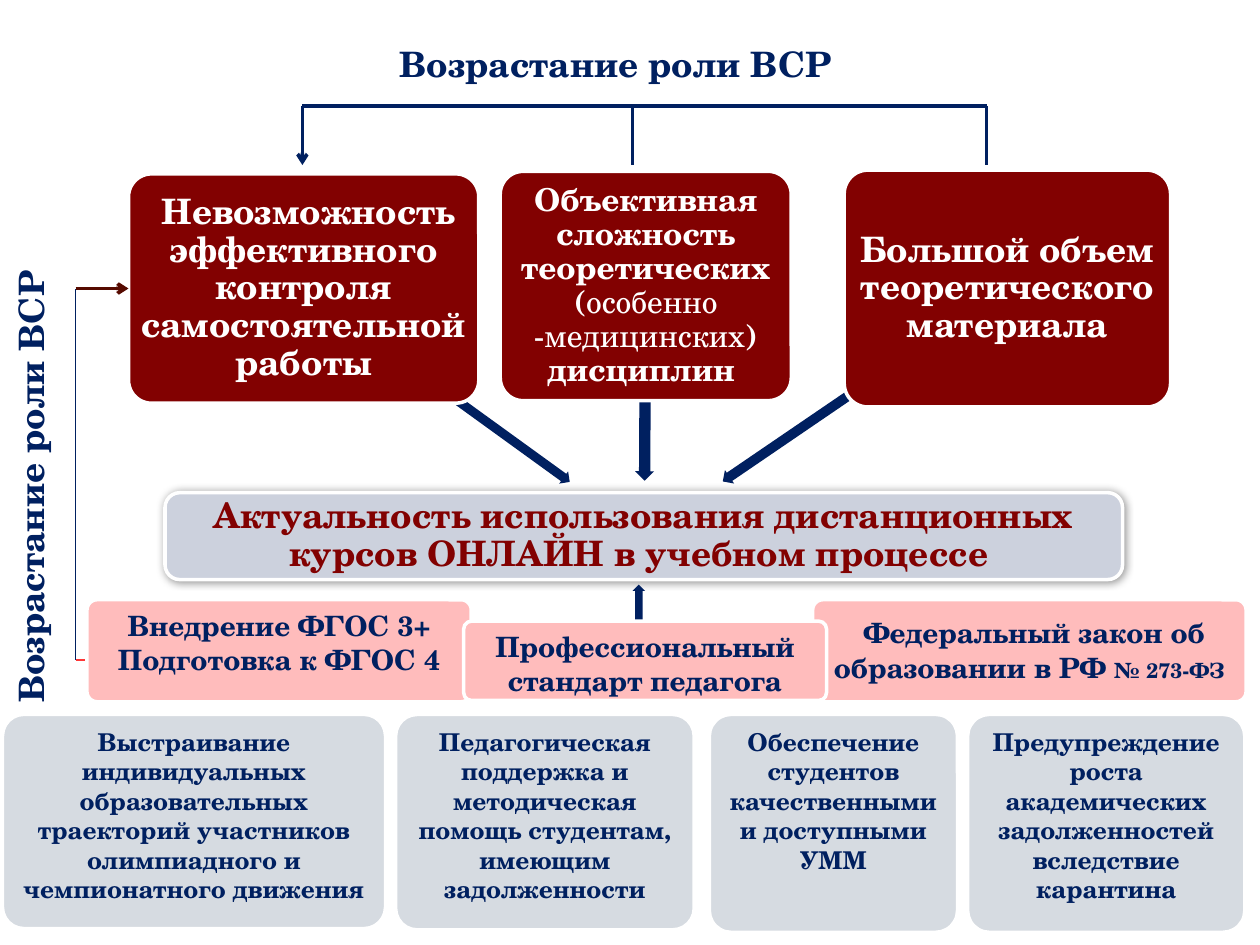
from lxml import etree
from pptx import Presentation
from pptx.dml.color import RGBColor
from pptx.enum.shapes import MSO_CONNECTOR, MSO_SHAPE
from pptx.enum.text import MSO_ANCHOR, PP_ALIGN
from pptx.oxml.ns import qn
from pptx.util import Inches, Pt

ROUNDED, LEFT_ARROW = MSO_SHAPE.ROUNDED_RECTANGLE, MSO_SHAPE.LEFT_ARROW
STRAIGHT = MSO_CONNECTOR.STRAIGHT
TOP, MIDDLE = MSO_ANCHOR.TOP, MSO_ANCHOR.MIDDLE
LEFT, CENTER = PP_ALIGN.LEFT, PP_ALIGN.CENTER
LEFT_SIDE = 1

FONT = "TeX Gyre Schola"
NAVY, MAROON, WHITE = "002060", "820101", "FFFFFF"
PINK, GREY, BLUE_GREY = "FFBCBC", "D6DBE1", "CCD1DD"
HEADING = "Возрастание роли ВСР"

REASON_TOP, BASIS_TOP, TASK_TOP = 1.38, 4.76, 5.67
BRACKET_TOP, BRACKET_BOTTOM = 0.84, 1.31
BRACKET_LEFT, BRACKET_MIDDLE, BRACKET_RIGHT = 2.4, 5.02, 7.83
LOOP_X, LOOP_TOP, LOOP_BOTTOM = 0.6, 2.29, 5.24

REASONS = [
    ((1.02, REASON_TOP, 2.78, 1.82),
     [[(" Невозможность эффективного контроля самостоятельной работы", 20, True)]]),
    ((3.97, 1.36, 2.31, 1.82),
     [[("Объективная сложность теоретических (", 18, True),
       ("особенно -медицинских", 18, False), (") дисциплин ", 18, True)]]),
    ((6.7, 1.35, 2.59, 1.88),
     [[("Большой объем теоретического материала", 20, True)]]),
]
ARROWS = [
    ((2.16, 3, 2.61, 0.12), 215.9),
    ((4.35, 2.97, 1.54, 0.15), 270.3),
    ((5.5, 2.99, 2.72, 0.13), 325.7),
    ((4.81, 4.85, 0.52, 0.1), 90),
]
BASES = [
    ((6.45, BASIS_TOP, 3.44, 0.81),
     [[(" ", 20, True), ("Федеральный закон об образовании в РФ ", 16, True),
       ("№ 273-ФЗ", 12, True)]]),
    ((0.69, BASIS_TOP, 3.05, 0.81),
     [[("Внедрение ФГОС 3+", 16, True)], [("Подготовка к ФГОС 4", 16, True)]]),
    ((3.68, 4.93, 2.88, 0.63),
     [[("Профессиональный стандарт педагога", 16, True)]]),
]
TASKS = [
    (0.02, 3.04, 1.7, "Выстраивание индивидуальных образовательных траекторий "
                      "участников олимпиадного и чемпионатного движения"),
    (3.14, 2.37, 1.71, "Педагогическая поддержка и методическая помощь студентам, "
                       "имеющим задолженности"),
    (5.63, 1.97, 1.73, "Обеспечение студентов качественными и доступными УММ"),
    (7.68, 2.2, 1.73, "Предупреждение роста академических задолженностей "
                      "вследствие карантина"),
]


def color(value):
    """Turn a hex string into a colour."""
    return RGBColor.from_string(value)


def write(shape, paragraphs, ink, align=CENTER, anchor=TOP, inset=None, spacing=None):
    """Fill a shape with paragraphs of (text, size, bold) runs."""
    frame = shape.text_frame
    frame.word_wrap = True
    frame.vertical_anchor = anchor
    if inset is not None:
        for side in ("left", "right", "top", "bottom"):
            setattr(frame, f"margin_{side}", Inches(inset))
    for index, runs in enumerate(paragraphs):
        paragraph = frame.add_paragraph() if index else frame.paragraphs[0]
        paragraph.alignment = align
        paragraph.line_spacing = spacing
        for text, size, bold in runs:
            run = paragraph.add_run()
            run.text = text
            for name, value in {"name": FONT, "size": Pt(size), "bold": bold}.items():
                setattr(run.font, name, value)
            run.font.color.rgb = color(ink)


def add_card(slide, box, fill, paragraphs, ink=NAVY, rounding=0.1, **layout):
    """Draw a rounded card with a white outline and text."""
    card = slide.shapes.add_shape(ROUNDED, *map(Inches, box))
    card.adjustments[0] = rounding
    card.shadow.inherit = False
    card.fill.solid()
    card.fill.fore_color.rgb = color(fill)
    card.line.color.rgb = color(WHITE)
    card.line.width = Pt(2)
    write(card, paragraphs, ink, **layout)
    return card


def add_glow(card):
    """Put a soft dark shadow around a card."""
    effects = card._element.spPr.find(qn("a:effectLst"))
    shadow = etree.SubElement(effects, qn("a:outerShdw"), blurRad=str(Pt(5)),
                              dist="0", dir="0", rotWithShape="0")
    tint = etree.SubElement(shadow, qn("a:srgbClr"), val="000000")
    etree.SubElement(tint, qn("a:alpha"), val="40000")


def add_block_arrow(slide, box, rotation):
    """Draw a rotated solid arrow."""
    arrow = slide.shapes.add_shape(LEFT_ARROW, *map(Inches, box))
    arrow.adjustments[0] = 0.6
    arrow.adjustments[1] = 0.5
    arrow.rotation = rotation
    arrow.shadow.inherit = False
    arrow.fill.solid()
    arrow.fill.fore_color.rgb = color(NAVY)
    arrow.line.fill.background()


def add_line(slide, start, end, ink=NAVY, width=2, head=False):
    """Draw a straight line, with an arrowhead at its end on request."""
    line = slide.shapes.add_connector(STRAIGHT, *map(Inches, start + end))
    line.line.color.rgb = color(ink)
    line.line.width = Pt(width)
    if head:
        etree.SubElement(line.line._get_or_add_ln(), qn("a:tailEnd"), type="arrow")
    etree.SubElement(line._element.spPr, qn("a:effectLst"))
    return line


def add_headings(slide):
    """Place the title and its copy along the left edge."""
    title = slide.shapes.title
    frame = {"left": 3.07, "top": 0.29, "width": 3.71, "height": 0.44}
    for name, value in frame.items():
        setattr(title, name, Inches(value))
    side_label = slide.shapes.add_textbox(*map(Inches, (-1.61, 3.6, 3.71, 0.44)))
    side_label.rotation = 270
    for heading in (title, side_label):
        write(heading, [[(HEADING, 20, True)]], NAVY, align=LEFT)


def add_bracket(slide):
    """Draw the bracket from the title to the three reasons."""
    for x in (BRACKET_LEFT, BRACKET_MIDDLE, BRACKET_RIGHT):
        add_line(slide, (x, BRACKET_TOP), (x, BRACKET_BOTTOM), head=x == BRACKET_LEFT)
    add_line(slide, (BRACKET_LEFT, BRACKET_TOP), (BRACKET_RIGHT, BRACKET_TOP))


def add_loop(slide, target):
    """Draw the line from the standards up to the first reason."""
    add_line(slide, (LOOP_X, LOOP_BOTTOM), (1.42, LOOP_BOTTOM), "FE3737", 1)
    add_line(slide, (LOOP_X, LOOP_BOTTOM), (LOOP_X, LOOP_TOP), width=1)
    pointer = add_line(slide, (LOOP_X, LOOP_TOP), (1.02, LOOP_TOP), "560A00", head=True)
    pointer.end_connect(target, LEFT_SIDE)


def main():
    """Build the slide and save it."""
    deck = Presentation()
    deck.slide_width, deck.slide_height = Inches(10), Inches(7.5)
    slide = deck.slides.add_slide(deck.slide_layouts[5])
    add_headings(slide)
    banner = add_card(
        slide, (1.31, 3.91, 7.6, 0.69), BLUE_GREY,
        [[("Актуальность использования дистанционных курсов ОНЛАЙН "
           "в учебном процессе ", 20, True)]],
        MAROON, 0.17, anchor=MIDDLE, inset=0.01, spacing=0.9)
    add_glow(banner)
    for box, rotation in ARROWS:
        add_block_arrow(slide, box, rotation)
    reasons = [add_card(slide, box, MAROON, paragraphs, WHITE,
                        anchor=MIDDLE, inset=0.04, spacing=0.9)
               for box, paragraphs in REASONS]
    add_bracket(slide)
    add_loop(slide, reasons[0])
    for box, paragraphs in BASES:
        add_card(slide, box, PINK, paragraphs)
    for left, width, height, task in TASKS:
        add_card(slide, (left, TASK_TOP, width, height), GREY, [[(task, 14, True)]])
    deck.save("out.pptx")


if __name__ == "__main__":
    main()
